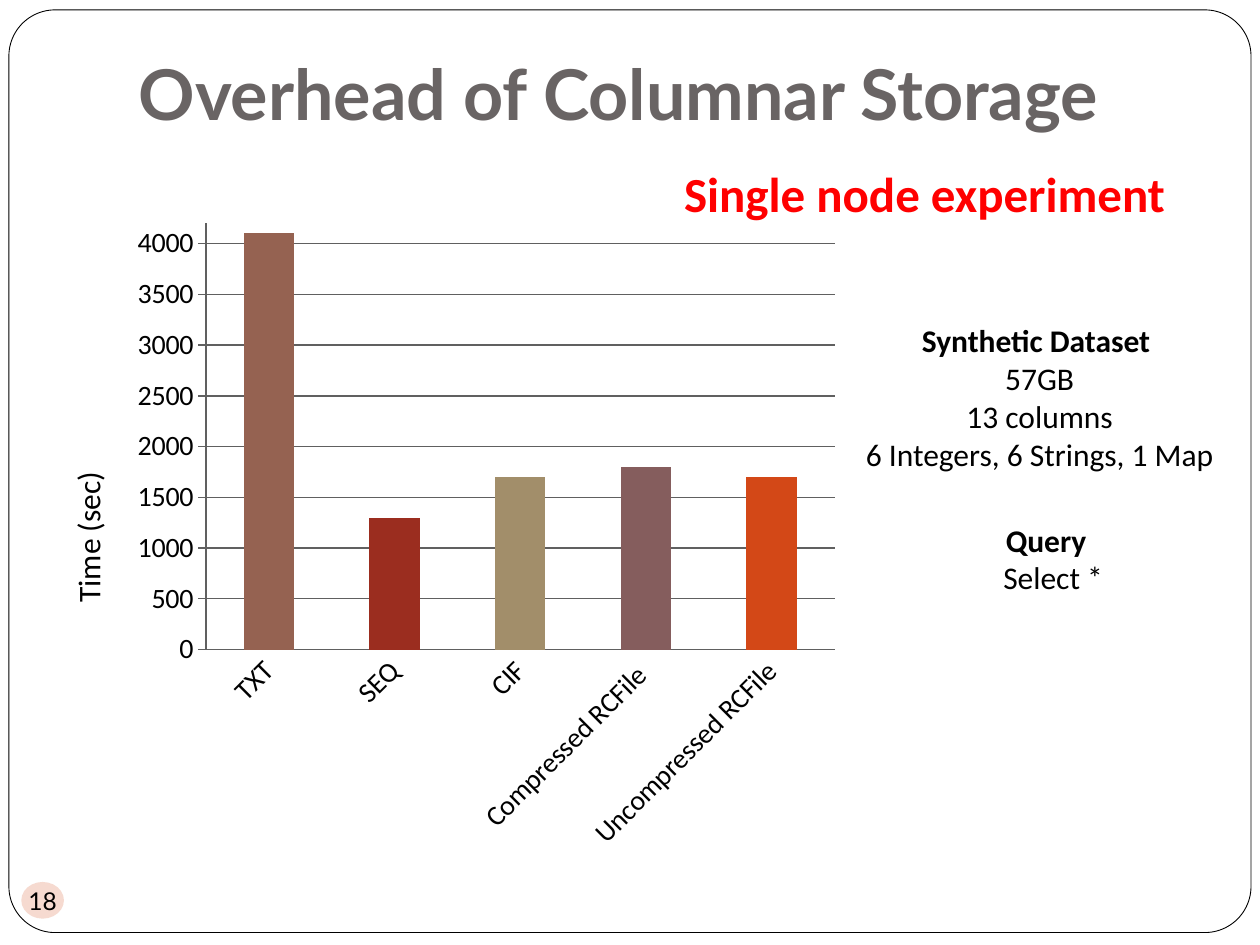
from lxml import etree
from pptx import Presentation
from pptx.chart.data import CategoryChartData
from pptx.dml.color import RGBColor
from pptx.enum.chart import XL_CHART_TYPE as CT, XL_TICK_MARK as TM
from pptx.enum.shapes import MSO_SHAPE as SHAPE
from pptx.enum.text import MSO_ANCHOR as ANCHOR, MSO_AUTO_SIZE as FIT, PP_ALIGN as ALIGN
from pptx.oxml import parse_xml
from pptx.oxml.ns import nsdecls, qn
from pptx.util import Cm, Pt

BARS = [
    ("TXT", 4100, "956251"),
    ("SEQ", 1300, "9B2D1F"),
    ("CIF", 1700, "A28E6A"),
    ("Compressed RCFile ", 1800, "855D5D"),
    ("Uncompressed RCFile", 1700, "D34817"),
]
GRID = "606060"


def rgb(color):
    return RGBColor.from_string(color)


def place(sp, box):
    sp.left, sp.top, sp.width, sp.height = (Cm(v) for v in box)


def style(font, size, color="000000", bold=False, name="Calibri"):
    font.size, font.bold, font.name = Pt(size), bold, name
    font.color.rgb = rgb(color)


def add_run(p, text, *args, **kwargs):
    r = p.add_run()
    r.text = text
    style(r.font, *args, **kwargs)


def add_frame(slide, box):
    sp = slide.shapes.add_shape(SHAPE.ROUNDED_RECTANGLE, *(Cm(v) for v in box))
    sp.shadow.inherit = False
    sp.adjustments[0] = 0.05
    sp.fill.solid()
    sp.fill.fore_color.rgb = rgb("FFFFFF")
    sp.line.color.rgb = rgb("000000")
    sp.line.width = Pt(0.5)
    slide.shapes._spTree.insert(2, sp._element)  # behind the title


def add_title(slide, box, text):
    sp = slide.shapes.title
    place(sp, box)
    tf = sp.text_frame
    tf.word_wrap, tf.auto_size = True, FIT.NONE
    tf.vertical_anchor = ANCHOR.BOTTOM
    tf.margin_bottom = Cm(0.25)
    p = tf.paragraphs[0]
    p.alignment = ALIGN.LEFT
    add_run(p, text, 40, "696464", True, "Lato")


def add_lines(slide, box, lines, size=18, color="000000"):
    """Centred lines, the first one a bold heading."""
    tf = slide.shapes.add_textbox(*(Cm(v) for v in box)).text_frame
    tf.word_wrap, tf.auto_size = True, FIT.SHAPE_TO_FIT_TEXT
    for i, line in enumerate(lines):
        p = tf.add_paragraph() if i else tf.paragraphs[0]
        p.alignment = ALIGN.CENTER
        add_run(p, line, size, color, i == 0)


def layout_xml(x, y, w=None, h=None):
    """Manual layout in fractions of the chart; with a size, of the inner plot."""
    parts = [("layoutTarget", "inner")] if w else []
    parts += [("xMode", "edge"), ("yMode", "edge"), ("x", x), ("y", y)]
    parts += [("w", w), ("h", h)] if w else []
    layout = parse_xml(f"<c:layout {nsdecls('c')}/>")
    manual = etree.SubElement(layout, qn("c:manualLayout"))
    for tag, val in parts:
        etree.SubElement(manual, qn(f"c:{tag}")).set("val", str(val))
    return layout


def set_layout(parent, before, layout):
    for old in parent.findall(qn("c:layout")):
        parent.remove(old)
    parent.insert(before, layout)


def add_bar_chart(slide, box):
    data = CategoryChartData()
    data.categories = [name for name, _, _ in BARS]
    data.add_series("Series 1", [value for _, value, _ in BARS])
    chart = slide.shapes.add_chart(CT.COLUMN_CLUSTERED, *(Cm(v) for v in box), data).chart
    chart.has_legend = chart.has_title = False
    style(chart.font, 12, name="Times New Roman")

    # Bars
    plot = chart.plots[0]
    plot.gap_width, plot.vary_by_categories = 150, False
    series = plot.series[0]
    for i, (_, _, color) in enumerate(BARS):
        fill = series.points[i].format.fill if i else series.format.fill
        fill.solid()
        fill.fore_color.rgb = rgb(color)

    # Axes
    cat, val = chart.category_axis, chart.value_axis
    for axis in (cat, val):
        style(axis.tick_labels.font, 16)
        axis.format.line.color.rgb = rgb(GRID)
    cat.major_tick_mark = TM.NONE
    cat._element.find(qn("c:txPr")).find(qn("a:bodyPr")).set("rot", "-2700000")
    val.major_tick_mark = TM.OUTSIDE
    val.minimum_scale, val.maximum_scale, val.major_unit = 0, 4200, 500
    val.has_major_gridlines = True
    val.major_gridlines.format.line.color.rgb = rgb(GRID)

    # Axis title
    tf = val.axis_title.text_frame
    add_run(tf.paragraphs[0], "Time (sec)", 18)
    tf._txBody.find(qn("a:bodyPr")).set("rot", "-5400000")

    set_layout(val.axis_title._element, 1, layout_xml(0.02, 0.39))
    set_layout(chart._chartSpace.chart.plotArea, 0, layout_xml(0.2, 0.02, 0.78, 0.65))


def add_page_number(slide, box, number):
    sp = slide.shapes.add_shape(SHAPE.OVAL, *(Cm(v) for v in box))
    sp.shadow.inherit = False
    sp.fill.solid()
    sp.fill.fore_color.rgb = rgb("D34817")
    color = sp._element.spPr.find(qn("a:solidFill"))[0]
    etree.SubElement(color, qn("a:alpha")).set("val", "20000")
    sp.line.fill.background()
    tf = sp.text_frame
    tf.word_wrap, tf.vertical_anchor = False, ANCHOR.MIDDLE
    tf.margin_left = tf.margin_right = tf.margin_top = tf.margin_bottom = 0
    p = tf.paragraphs[0]
    p.alignment = ALIGN.CENTER
    add_run(p, number, 14, name="Lato")


def main():
    prs = Presentation()
    prs.slide_width, prs.slide_height = Cm(25.4), Cm(19.05)
    slide = prs.slides.add_slide(prs.slide_layouts[5])

    add_frame(slide, (0.18, 0.2, 25.04, 18.6))
    add_title(slide, (2.54, 0.76, 21.59, 2.21), "Overhead of Columnar Storage")
    add_bar_chart(slide, (0.9, 4.24, 16.25, 13.22))
    add_lines(slide, (17.15, 6.35, 7.62, 3.33),
              ["Synthetic Dataset ", " 57GB ", "13 columns", "6 Integers, 6 Strings, 1 Map"])
    add_lines(slide, (17.35, 10.37, 7.62, 1.8), ["Query ", " Select *"])
    add_page_number(slide, (0.43, 17.78, 0.86, 0.74), "18")
    add_lines(slide, (12.5, 3.18, 12.27, 1.45), ["Single node experiment"], 28, "FF0000")
    prs.save("out.pptx")


if __name__ == "__main__":
    main()
